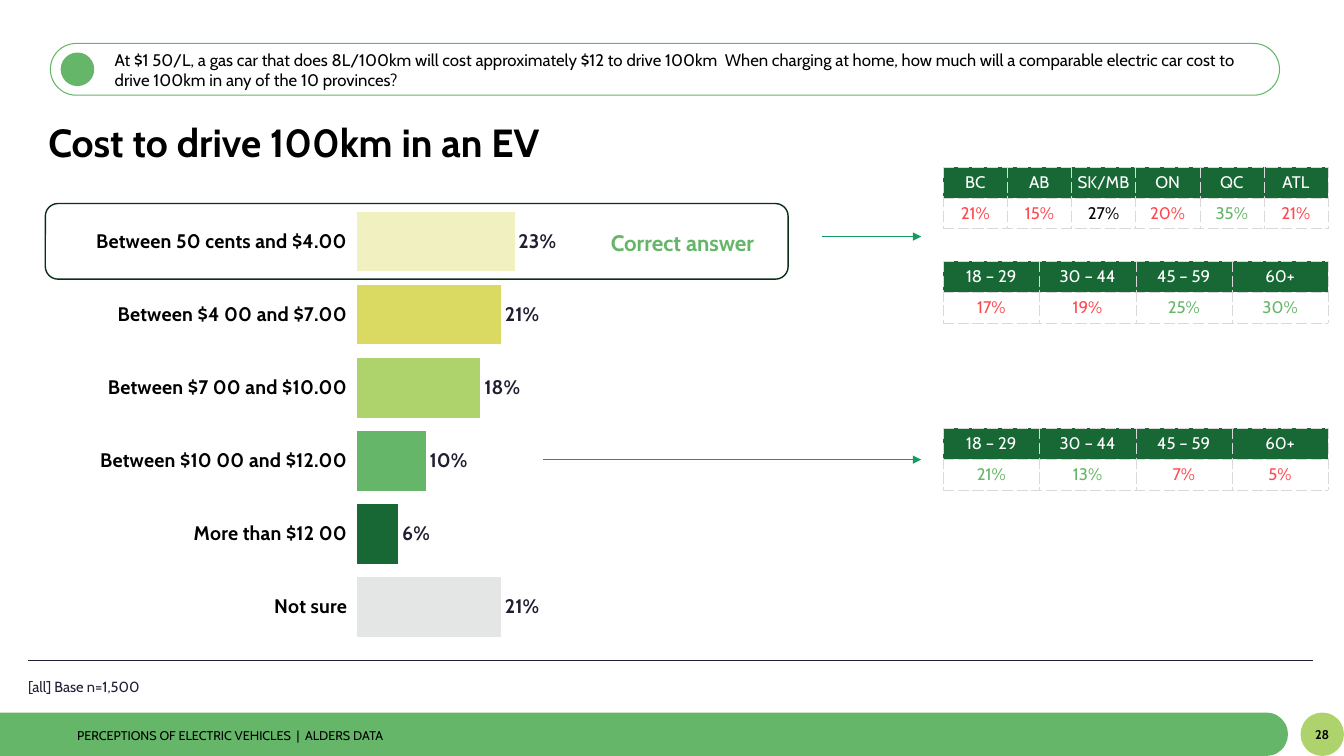
from dataclasses import dataclass

from lxml.etree import SubElement
from pptx import Presentation
from pptx.chart.data import CategoryChartData
from pptx.dml.color import RGBColor
from pptx.enum.chart import XL_CHART_TYPE, XL_LABEL_POSITION, XL_TICK_MARK
from pptx.enum.shapes import MSO_CONNECTOR, MSO_SHAPE
from pptx.enum.text import MSO_ANCHOR, PP_ALIGN
from pptx.oxml import parse_xml
from pptx.oxml.ns import nsdecls, qn
from pptx.shapes.autoshape import Shape
from pptx.slide import Slide
from pptx.util import Pt

FONT = "Cabin"
COLORS = {
    "black": "000000", "white": "FFFFFF", "ink": "202036", "label": "201E30",
    "green": "65B668", "lime": "AED36D", "forest": "186836", "outline": "0B2E18",
    "arrow": "169964", "red": "FF4850", "border": "D9D9D9",
    "cream": "F0F0C0", "yellow": "DADA62", "gray": "E4E5E5",
}


@dataclass
class Box:
    left: float
    top: float
    width: float
    height: float

    def lengths(self) -> tuple[Pt, Pt, Pt, Pt]:
        return Pt(self.left), Pt(self.top), Pt(self.width), Pt(self.height)


@dataclass
class Label:
    text: str
    box: Box
    size: float
    color: str = "black"
    bold: bool = False
    align: PP_ALIGN = PP_ALIGN.LEFT
    anchor: MSO_ANCHOR = MSO_ANCHOR.TOP
    line_spacing: float = 0.9


@dataclass
class Answer:
    text: str
    share: float
    color: str


@dataclass
class Share:
    group: str
    value: str
    color: str


@dataclass
class Breakdown:
    top: float
    shares: list[Share]


ANSWERS = [
    Answer("Between 50 cents and $4.00", 0.23, "cream"),
    Answer("Between $4 00 and $7.00", 0.21, "yellow"),
    Answer("Between $7 00 and $10.00", 0.18, "lime"),
    Answer("Between $10 00 and $12.00", 0.10, "green"),
    Answer("More than $12 00", 0.06, "forest"),
    Answer("Not sure", 0.21, "gray"),
]
BREAKDOWNS = [
    Breakdown(119.3, [
        Share("BC", "21%", "red"), Share("AB", "15%", "red"),
        Share("SK/MB", "27%", "black"), Share("ON", "20%", "red"),
        Share("QC", "35%", "green"), Share("ATL", "21%", "red"),
    ]),
    Breakdown(186.5, [
        Share("18 – 29", "17%", "red"), Share("30 – 44", "19%", "red"),
        Share("45 – 59", "25%", "green"), Share("60+", "30%", "green"),
    ]),
    Breakdown(306, [
        Share("18 – 29", "21%", "green"), Share("30 – 44", "13%", "green"),
        Share("45 – 59", "7%", "red"), Share("60+", "5%", "red"),
    ]),
]
LABELS = [
    Label("PERCEPTIONS OF ELECTRIC VEHICLES  |  ALDERS DATA", Box(48, 517.7, 689, 15), 9),
    Label("At $1 50/L, a gas car that does 8L/100km will cost approximately $12 to drive "
          "100km  When charging at home, how much will a comparable electric car cost to "
          "drive 100km in any of the 10 provinces?",
          Box(74.9, 31.7, 831, 36), 12, anchor=MSO_ANCHOR.MIDDLE, line_spacing=1),
    Label("Cost to drive 100km in an EV", Box(27.4, 82, 878, 43), 28, bold=True,
          anchor=MSO_ANCHOR.MIDDLE),
    Label("[all] Base n=1,500", Box(13, 481.7, 760, 24), 10.5, "ink"),
    Label("Correct answer", Box(416, 160, 143, 27), 16, "green", True,
          PP_ALIGN.CENTER, line_spacing=1),
]


def rgb(color: str) -> RGBColor:
    return RGBColor.from_string(COLORS[color])


def style_font(font, size: float, color: str, bold: bool = False) -> None:
    font.name, font.size, font.bold = FONT, Pt(size), bold
    font.color.rgb = rgb(color)


def add_shape(slide: Slide, kind: MSO_SHAPE, box: Box, fill: str | None = None,
              line: str | None = None, line_width: float = 1) -> Shape:
    shape = slide.shapes.add_shape(kind, *box.lengths())
    shape.shadow.inherit = False
    if fill:
        shape.fill.solid()
        shape.fill.fore_color.rgb = rgb(fill)
    else:
        shape.fill.background()
    if line:
        shape.line.color.rgb = rgb(line)
        shape.line.width = Pt(line_width)
    else:
        shape.line.fill.background()
    return shape


def add_label(slide: Slide, label: Label) -> None:
    text_frame = slide.shapes.add_textbox(*label.box.lengths()).text_frame
    text_frame.word_wrap = True
    text_frame.vertical_anchor = label.anchor
    text_frame.text = label.text
    paragraph = text_frame.paragraphs[0]
    paragraph.alignment = label.align
    paragraph.line_spacing = label.line_spacing
    style_font(paragraph.runs[0].font, label.size, label.color, label.bold)


def add_rule(slide: Slide, left: float, right: float, top: float, color: str,
             width: float, arrow: bool = False) -> None:
    connector = slide.shapes.add_connector(
        MSO_CONNECTOR.STRAIGHT, Pt(left), Pt(top), Pt(right), Pt(top))
    connector.line.color.rgb = rgb(color)
    connector.line.width = Pt(width)
    if arrow:
        SubElement(connector.line._get_or_add_ln(), qn("a:tailEnd"), type="triangle")
    SubElement(connector.element.spPr, qn("a:effectLst"))


def add_answer_chart(slide: Slide, box: Box) -> None:
    data = CategoryChartData(number_format="0%")
    data.categories = [answer.text for answer in ANSWERS]
    data.add_series("Series 1", [answer.share for answer in ANSWERS])
    chart = slide.shapes.add_chart(XL_CHART_TYPE.BAR_CLUSTERED, *box.lengths(), data).chart
    chart.has_legend = chart.has_title = False
    style_font(chart.font, 16, "black", True)

    category_axis, value_axis = chart.category_axis, chart.value_axis
    category_axis.reverse_order = True
    category_axis.major_tick_mark = XL_TICK_MARK.OUTSIDE
    category_axis.format.line.fill.background()
    style_font(category_axis.tick_labels.font, 14, "black", True)
    value_axis.minimum_scale, value_axis.maximum_scale = 0, 1
    value_axis.has_major_gridlines = value_axis.visible = False

    plot = chart.plots[0]
    plot.gap_width = 23
    plot.vary_by_categories = False
    plot.has_data_labels = True
    labels = plot.data_labels
    labels.show_value = True
    labels.position = XL_LABEL_POSITION.OUTSIDE_END
    labels.number_format, labels.number_format_is_linked = "0%", False
    style_font(labels.font, 14, "label", True)
    for index, answer in enumerate(ANSWERS):
        fill = plot.series[0].points[index].format.fill
        fill.solid()
        fill.fore_color.rgb = rgb(answer.color)

    plot_area = chart.element.find(".//" + qn("c:plotArea"))
    for layout in plot_area.findall(qn("c:layout")):
        plot_area.remove(layout)
    plot_area.insert(0, parse_xml(
        f'<c:layout {nsdecls("c")}><c:manualLayout><c:layoutTarget val="inner"/>'
        '<c:xMode val="edge"/><c:yMode val="edge"/><c:x val="0.316"/><c:y val="0.033"/>'
        '<c:w val="0.643"/><c:h val="0.934"/></c:manualLayout></c:layout>'))


def fill_cell(cell, text: str, color: str, fill: str | None = None) -> None:
    cell.text = text
    cell.vertical_anchor = MSO_ANCHOR.MIDDLE
    cell.margin_left = cell.margin_right = cell.margin_top = cell.margin_bottom = 0
    paragraph = cell.text_frame.paragraphs[0]
    paragraph.alignment = PP_ALIGN.CENTER
    style_font(paragraph.runs[0].font, 12, color)
    for side in "LRTB":
        cell._tc.get_or_add_tcPr().append(parse_xml(
            f'<a:ln{side} {nsdecls("a")} w="{Pt(0.25)}"><a:solidFill>'
            f'<a:srgbClr val="{COLORS["border"]}"/></a:solidFill>'
            f'<a:prstDash val="lgDash"/></a:ln{side}>'))
    if fill:
        cell.fill.solid()
        cell.fill.fore_color.rgb = rgb(fill)
    else:
        cell.fill.background()


def add_breakdown(slide: Slide, breakdown: Breakdown) -> None:
    count = len(breakdown.shares)
    box = Box(673.7, breakdown.top, 275, 44)
    table = slide.shapes.add_table(2, count, *box.lengths()).table
    table.first_row = table.horz_banding = False
    for column, share in enumerate(breakdown.shares):
        table.columns[column].width = Pt(box.width / count)
        fill_cell(table.cell(0, column), share.group, "white", "forest")
        fill_cell(table.cell(1, column), share.value, share.color)


def main() -> None:
    presentation = Presentation()
    presentation.slide_width, presentation.slide_height = Pt(960), Pt(540)
    slide = presentation.slides.add_slide(presentation.slide_layouts[6])

    footer = add_shape(slide, MSO_SHAPE.ROUND_2_SAME_RECTANGLE, Box(444.5, 64.5, 31, 920), "green")
    footer.rotation = 90
    footer.adjustments[0] = 0.5
    page = add_shape(slide, MSO_SHAPE.OVAL, Box(929, 509, 31, 31), "lime").text_frame
    page.margin_left = page.margin_right = 0
    page.text = "28"
    page.paragraphs[0].alignment = PP_ALIGN.CENTER
    style_font(page.paragraphs[0].runs[0].font, 9, "black", True)

    question = add_shape(slide, MSO_SHAPE.ROUNDED_RECTANGLE, Box(36, 31, 878, 37),
                         line="green", line_width=0.75)
    question.adjustments[0] = 0.5
    add_shape(slide, MSO_SHAPE.OVAL, Box(43.3, 37.5, 24, 24), "green")
    add_rule(slide, 20, 938, 472, "ink", 0.5)
    add_answer_chart(slide, Box(15, 135.4, 760, 335.5))
    for label in LABELS:
        add_label(slide, label)
    add_shape(slide, MSO_SHAPE.ROUNDED_RECTANGLE, Box(32.4, 145.4, 530.6, 54), line="outline")
    for left, top in ((587, 169), (388, 328.3)):
        add_rule(slide, left, 658, top, "arrow", 1, arrow=True)
    for breakdown in BREAKDOWNS:
        add_breakdown(slide, breakdown)
    presentation.save("out.pptx")


if __name__ == "__main__":
    main()
